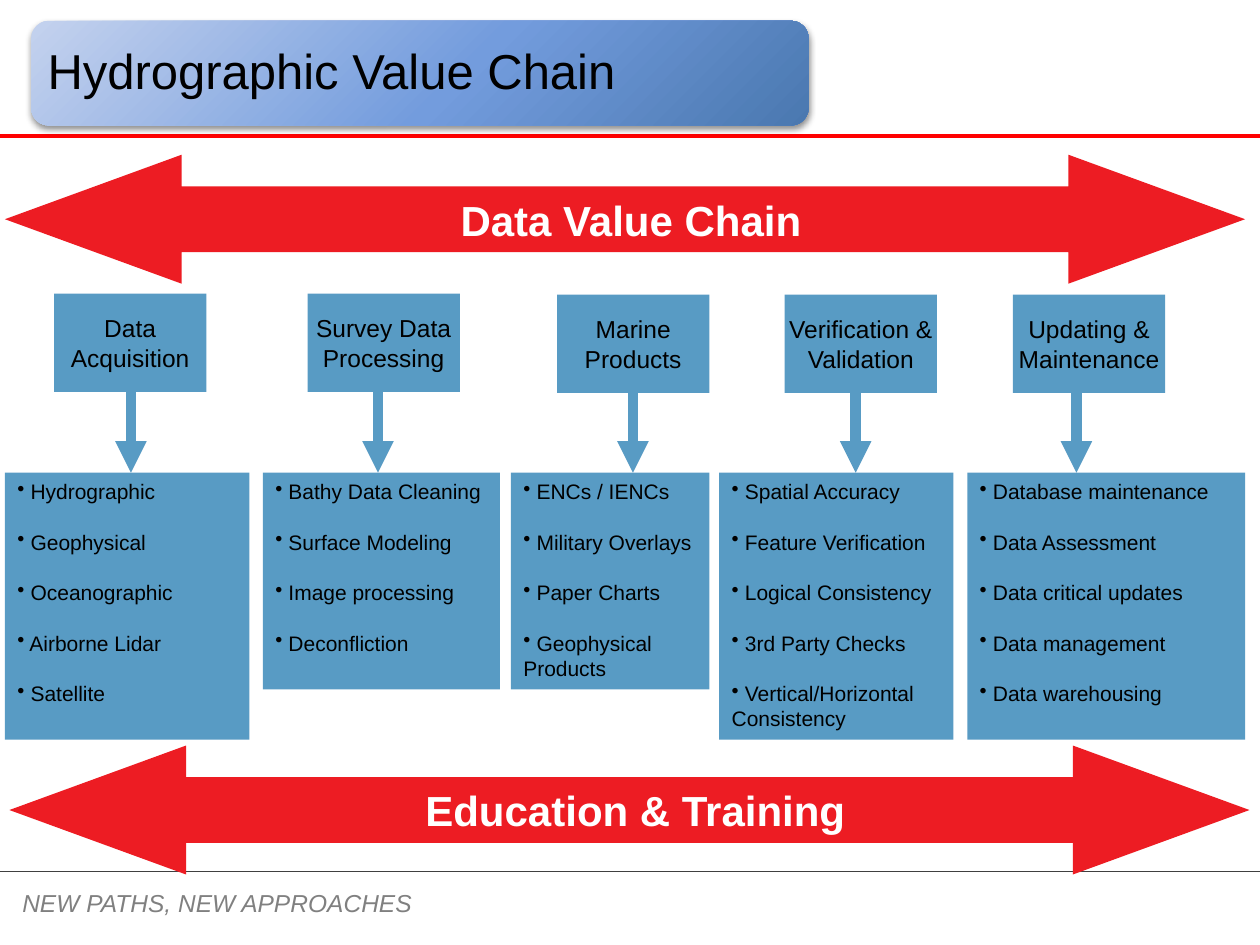
import lxml.etree
import pptx
import pptx.dml.color
import pptx.enum.shapes
import pptx.enum.text
import pptx.oxml.ns
import pptx.util

Cm = pptx.util.Cm
Pt = pptx.util.Pt
RGBColor = pptx.dml.color.RGBColor
SHAPE = pptx.enum.shapes.MSO_SHAPE
ALIGN = pptx.enum.text.PP_ALIGN
ANCHOR = pptx.enum.text.MSO_ANCHOR
qn = pptx.oxml.ns.qn

BLACK = RGBColor(0x00, 0x00, 0x00)
WHITE = RGBColor(0xFF, 0xFF, 0xFF)
GRAY = RGBColor(0x80, 0x80, 0x80)
DARK = RGBColor(0x40, 0x40, 0x40)
RED = RGBColor(0xFF, 0x00, 0x00)
CRIMSON = RGBColor(0xED, 0x1C, 0x23)
BLUE = RGBColor(0x58, 0x9B, 0xC4)
FADE = [
    (0, RGBColor(0xC4, 0xD2, 0xEE)),
    (55, RGBColor(0x73, 0x9C, 0xDD)),
    (100, RGBColor(0x4A, 0x78, 0xB0)),
]

WIDTH = 25.4
TALL, SHORT = 5.38, 4.37
LIST_TOP = 9.53

# label, label left, label top, arrow x, list left, list width, list height, items
STAGES = [
    ("Data Acquisition", 1.09, 5.92, 2.64, 0.1, 4.93, TALL,
     ["Hydrographic", "Geophysical", "Oceanographic", "Airborne Lidar",
      "Satellite"]),
    ("Survey Data Processing", 6.2, 5.92, 7.62, 5.3, 4.78, SHORT,
     ["Bathy Data Cleaning", "Surface Modeling", "Image processing",
      "Deconfliction"]),
    ("Marine Products", 11.23, 5.94, 12.76, 10.3, 4, SHORT,
     ["ENCs / IENCs", "Military Overlays", "Paper Charts",
      "Geophysical Products"]),
    ("Verification & Validation", 15.82, 5.94, 17.25, 14.5, 4.72, TALL,
     ["Spatial Accuracy", "Feature Verification", "Logical Consistency",
      "3rd Party Checks", "Vertical/Horizontal Consistency"]),
    ("Updating & Maintenance", 20.42, 5.94, 21.7, 19.5, 5.6, TALL,
     ["Database maintenance", "Data Assessment", "Data critical updates",
      "Data management", "Data warehousing"]),
]


def add_run(para, text, size, color, bold=False, italic=False):
    run = para.add_run()
    run.text = text
    font = run.font
    font.name = "Arial"
    font.size = Pt(size)
    font.color.rgb = color
    font.bold = bold
    font.italic = italic


def set_inset(frame, gap):
    frame.margin_left = frame.margin_right = Cm(gap)
    frame.margin_top = frame.margin_bottom = Cm(gap)


def add_block(slide, kind, left, top, width, height, color):
    block = slide.shapes.add_shape(
        kind, Cm(left), Cm(top), Cm(width), Cm(height))
    block.shadow.inherit = False
    block.fill.solid()
    block.fill.fore_color.rgb = color
    block.line.fill.background()
    block.text_frame.word_wrap = True
    return block


def add_line(slide, start, end, color, width, head=False):
    line = slide.shapes.add_connector(
        pptx.enum.shapes.MSO_CONNECTOR.STRAIGHT,
        Cm(start[0]), Cm(start[1]), Cm(end[0]), Cm(end[1]))
    line.line.color.rgb = color
    line.line.width = Pt(width)
    if head:
        lxml.etree.SubElement(
            line.line._get_or_add_ln(), qn("a:tailEnd"), type="triangle")
    lxml.etree.SubElement(line._element.spPr, qn("a:effectLst"))


def add_banner(slide, text, left, top):
    """Add a wide two-headed arrow with a caption."""
    arrow = add_block(
        slide, SHAPE.LEFT_RIGHT_ARROW, left, top, 25, 2.6, CRIMSON)
    arrow.adjustments[0] = 0.51
    arrow.adjustments[1] = 1.37
    frame = arrow.text_frame
    frame.word_wrap = False
    frame.margin_left = Cm(0.49)
    frame.vertical_anchor = ANCHOR.MIDDLE
    para = frame.paragraphs[0]
    para.alignment = ALIGN.CENTER
    add_run(para, text, 24, WHITE, bold=True)


def add_label(slide, text, left, top):
    box = add_block(slide, SHAPE.RECTANGLE, left, top, 3.07, 1.98, BLUE)
    frame = box.text_frame
    set_inset(frame, 0)
    frame.vertical_anchor = ANCHOR.MIDDLE
    para = frame.paragraphs[0]
    para.alignment = ALIGN.CENTER
    add_run(para, text, 14, BLACK)


def add_list(slide, items, left, width, height):
    box = add_block(
        slide, SHAPE.RECTANGLE, left, LIST_TOP, width, height, BLUE)
    frame = box.text_frame
    frame.vertical_anchor = ANCHOR.TOP
    for i, item in enumerate(items):
        para = frame.add_paragraph() if i else frame.paragraphs[0]
        para.alignment = ALIGN.LEFT
        if i:
            para.space_before = Pt(14.4)
        lxml.etree.SubElement(
            para._p.get_or_add_pPr(), qn("a:buChar"), char="•")
        add_run(para, " " + item, 12, BLACK)


def add_stage(slide, stage):
    """Add one column: a label, an arrow down and a list."""
    label, left, top, mid, start, width, height, items = stage
    add_label(slide, label, left, top)
    add_list(slide, items, start, width, height)
    add_line(slide, (mid, 7.9), (mid, LIST_TOP), BLUE, 6, head=True)


def add_plate(slide):
    """Add the shaded rounded plate behind the title."""
    plate = add_block(
        slide, SHAPE.ROUNDED_RECTANGLE, 0.63, 0.42, 15.67, 2.11, BLUE)
    plate.fill.gradient()
    plate.fill.gradient_angle = 315
    stops = plate._element.spPr.find(".//" + qn("a:gsLst"))
    for stop in list(stops):
        stops.remove(stop)
    for place, color in FADE:
        stop = lxml.etree.SubElement(
            stops, qn("a:gs"), pos=str(place * 1000))
        lxml.etree.SubElement(stop, qn("a:srgbClr"), val=str(color))
    glow = lxml.etree.SubElement(
        plate._element.spPr.find(qn("a:effectLst")), qn("a:outerShdw"),
        blurRad=str(Pt(4)), dist=str(Pt(2)), dir="5400000", rotWithShape="0")
    tint = lxml.etree.SubElement(glow, qn("a:srgbClr"), val=str(BLACK))
    lxml.etree.SubElement(tint, qn("a:alpha"), val="45000")


def add_title(slide, text):
    add_plate(slide)
    title = slide.shapes.title
    title.left, title.top = Cm(0.73), Cm(0.53)
    title.width, title.height = Cm(15.47), Cm(1.9)
    slide.shapes._spTree.append(title._element)  # bring above the plate
    frame = title.text_frame
    frame.word_wrap = True
    frame.auto_size = pptx.enum.text.MSO_AUTO_SIZE.NONE
    frame.vertical_anchor = ANCHOR.MIDDLE
    set_inset(frame, 0.23)
    para = frame.paragraphs[0]
    para.alignment = ALIGN.LEFT
    para.line_spacing = 0.9
    add_run(para, text, 28, BLACK)


def add_motto(slide, text):
    box = slide.shapes.add_textbox(Cm(0.2), Cm(17.78), Cm(8.9), Cm(0.86))
    box.text_frame.word_wrap = False
    add_run(box.text_frame.paragraphs[0], text, 14, GRAY, italic=True)


def main():
    deck = pptx.Presentation()
    deck.slide_width, deck.slide_height = Cm(WIDTH), Cm(19.05)
    slide = deck.slides.add_slide(deck.slide_layouts[5])
    add_line(slide, (0, 2.74), (WIDTH, 2.74), RED, 2.25)
    add_line(slide, (0, 17.57), (WIDTH, 17.57), DARK, 0.75)
    add_motto(slide, "NEW PATHS, NEW APPROACHES")
    add_banner(slide, "Data Value Chain", 0.1, 3.12)
    for stage in STAGES:
        add_stage(slide, stage)
    add_banner(slide, "Education & Training", 0.19, 15.03)
    add_title(slide, "Hydrographic Value Chain")
    deck.save("out.pptx")


if __name__ == "__main__":
    main()
